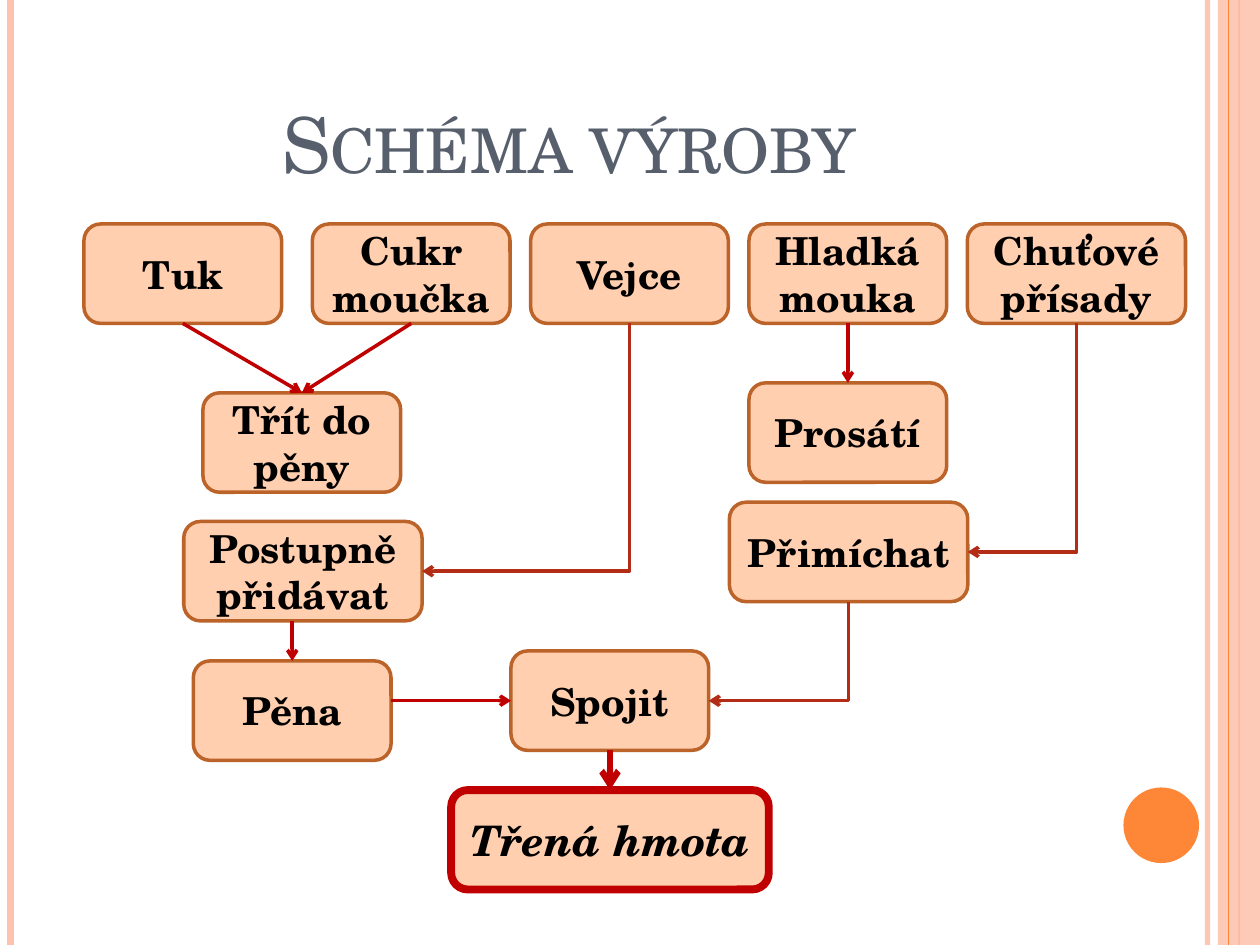
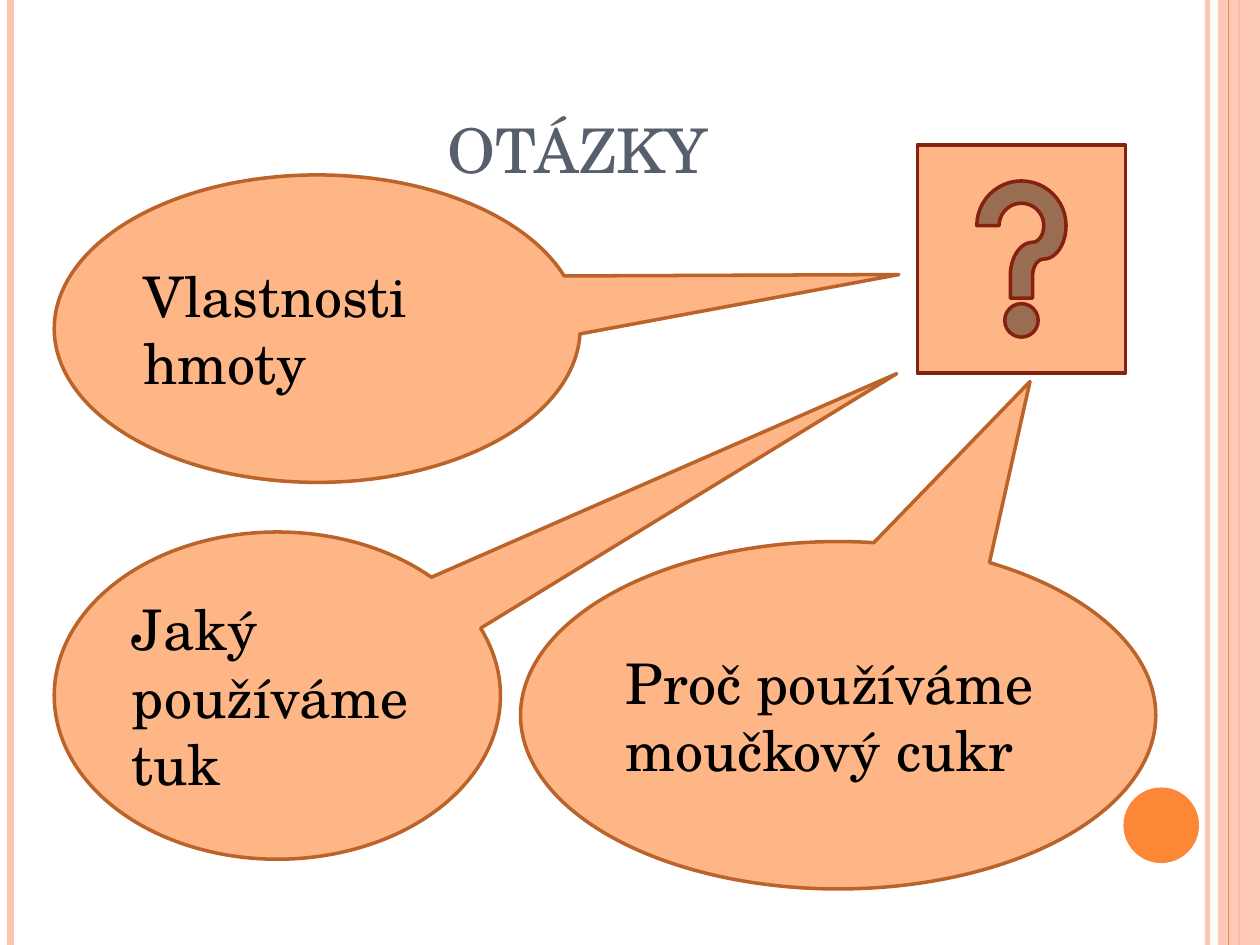
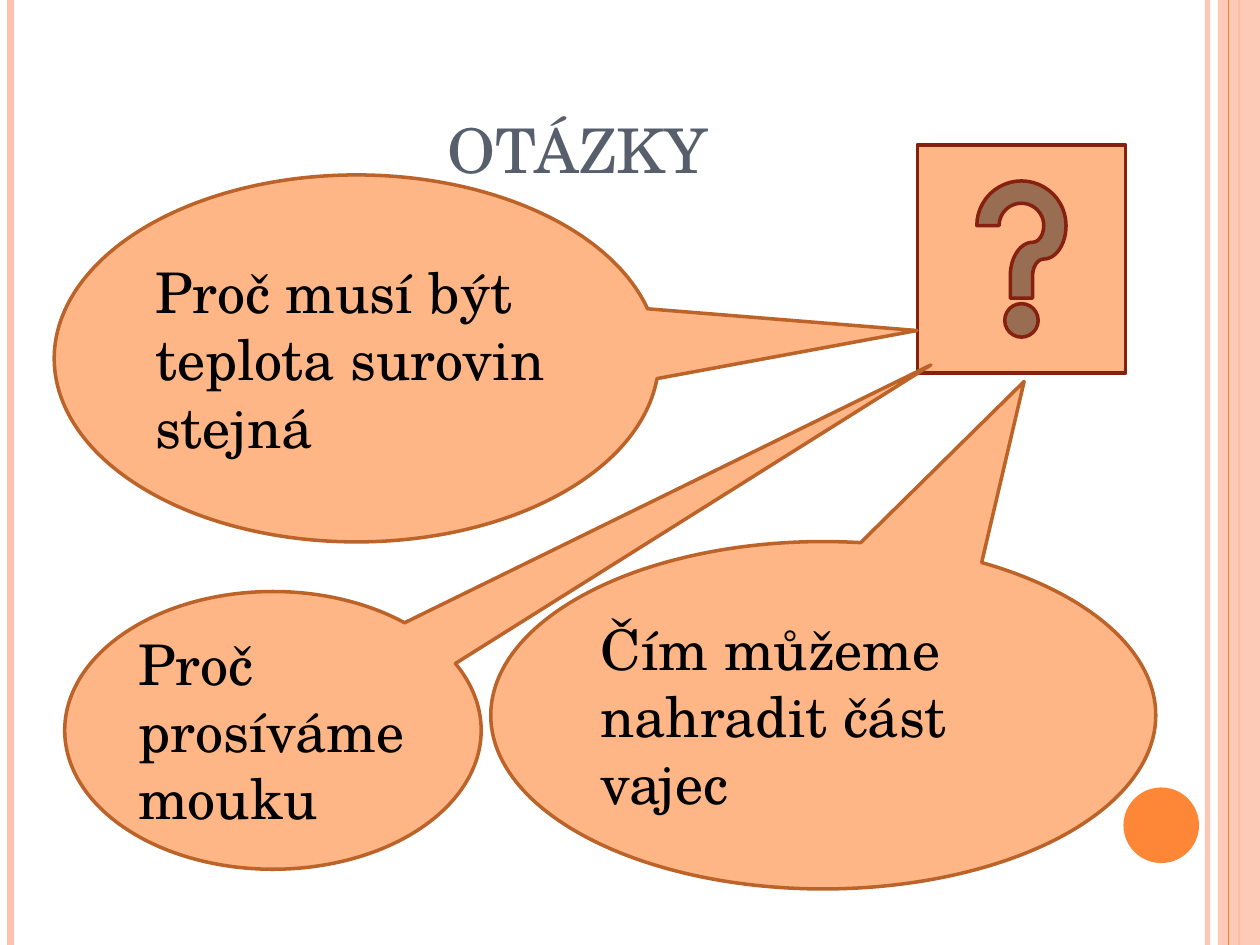
import pptx
import pptx.util
import pptx.dml.color
import pptx.enum.shapes
import pptx.enum.text
import pptx.oxml
from pptx.oxml.ns import qn

Pt = pptx.util.Pt
KIND = pptx.enum.shapes.MSO_SHAPE
LINK = pptx.enum.shapes.MSO_CONNECTOR
ALIGN = pptx.enum.text.PP_ALIGN
ANCHOR = pptx.enum.text.MSO_ANCHOR

# Shared look
FONT = "TeX Gyre Schola"
INK, SLATE = "000000", "575F6D"
ROSE, ORANGE = "FEC3AE", "FE8637"
PEACH, CREAM = "FEB687", "FFCFAF"
BROWN, RED, BRICK, MAROON = "BC6329", "C00000", "B32C16", "862110"
WIDE, HIGH = 720, 540

# Scheme: text, left, top, width
BOX_W, BOX_H = 113, 56.8
ROW, STEP, FIRST = 128, 124.75, 178.5
BOXES = {
    "fat": ("Tuk", 48, ROW, BOX_W),
    "sugar": ("Cukr moučka", FIRST, ROW, BOX_W),
    "eggs": ("Vejce", FIRST + STEP, ROW, BOX_W),
    "flour": ("Hladká mouka", FIRST + 2 * STEP, ROW, BOX_W),
    "taste": ("Chuťové přísady", FIRST + 3 * STEP, ROW, 124.7),
    "cream": ("Třít do pěny", 116, 224.5, BOX_W),
    "add": ("Postupně přidávat", 105, 298, 136.2),
    "foam": ("Pěna", 110.5, 377.7, BOX_W),
    "sift": ("Prosátí", FIRST + 2 * STEP, 218.8, BOX_W),
    "mix": ("Přimíchat", 416.8, 287, 136.2),
    "join": ("Spojit", 292, 372, BOX_W),
    "batter": ("Třená hmota", 257.8, 451.5, 181.5),
}
FLOWS = [
    ("fat", "cream", "slant"),
    ("sugar", "cream", "slant"),
    ("flour", "sift", "drop"),
    ("add", "foam", "drop"),
    ("foam", "join", "right"),
    ("eggs", "add", "bend"),
    ("taste", "mix", "bend"),
    ("mix", "join", "bend"),
    ("join", "batter", "drop"),
]

# Questions: text, place, tip of the callout
ASKS = [
    [
        ("Vlastnosti hmoty", (31, 100, 300.5, 175.7), (1.106, -0.176)),
        ("Proč používáme moučkový cukr", (297.5, 309.5, 363, 198.5), (0.302, -0.961)),
        ("Jaký používáme tuk", (31, 304, 255, 187), (1.388, -0.984)),
    ],
    [
        ("Proč musí být teplota surovin stejná", (31, 100, 345.5, 209.7), (0.927, -0.076)),
        ("Čím můžeme nahradit část vajec", (280.5, 309.5, 380, 198.5), (0.302, -0.961)),
        ("Proč prosíváme mouku", (37, 338, 238, 158.7), (1.58, -1.316)),
    ],
]


def tint(target, code, alpha=None):
    """Give a fill a solid colour, with opacity in percent if set."""
    target.solid()
    target.fore_color.rgb = pptx.dml.color.RGBColor.from_string(code)
    if alpha:
        node = target._xPr.find(".//" + qn("a:srgbClr"))
        pptx.oxml.xmlchemy.OxmlElement
        part = node.makeelement(qn("a:alpha"), {"val": str(alpha * 1000)})
        node.append(part)


def shape(slide, kind, place, fill, edge=None, width=2, alpha=None):
    item = slide.shapes.add_shape(kind, *map(Pt, place))
    item.shadow.inherit = False
    tint(item.fill, fill, alpha)
    if edge:
        tint(item.line.fill, edge)
        item.line.width = Pt(width)
    else:
        item.line.fill.background()
    return item


def write(item, text, size, align, color=INK, anchor=ANCHOR.MIDDLE, bold=False, slope=False):
    frame = item.text_frame
    frame.word_wrap = True
    frame.vertical_anchor = anchor
    para = frame.paragraphs[0]
    para.alignment = align
    run = para.add_run()
    run.text = text
    font = run.font
    font.name, font.size, font.bold, font.italic = FONT, Pt(size), bold, slope
    tint(font.fill, color)
    return run


def line(slide, start, end, color, width, kind=LINK.STRAIGHT, arrow=False, alpha=None):
    link = slide.shapes.add_connector(kind, *map(Pt, start + end))
    link.line.width = Pt(width)
    tint(link.line.fill, color, alpha)
    props = link._element.spPr
    if arrow:
        edge = props.find(qn("a:ln"))
        edge.append(edge.makeelement(qn("a:tailEnd"), {"type": "arrow"}))
    props.append(props.makeelement(qn("a:effectLst"), {}))
    return link


def bend(slide, start, end, color, width):
    """Arrow that runs down, then left: a right-down elbow turned by 90 degrees."""
    (x1, y1), (x2, y2) = start, end
    midx, midy = (x1 + x2) / 2, (y1 + y2) / 2
    halfw, halfh = (y2 - y1) / 2, (x1 - x2) / 2
    link = line(slide, (midx - halfw, midy - halfh), (midx + halfw, midy + halfh),
                color, width, LINK.ELBOW, True)
    props = link._element.spPr
    props.find(qn("a:xfrm")).set("rot", "5400000")
    props.find(qn("a:prstGeom")).set("prst", "bentConnector2")


def page(deck, title):
    """Blank slide with side bands, disc and title."""
    slide = deck.slides.add_slide(deck.slide_layouts[6])

    def band(x, color, width, alpha=None):
        line(slide, (x, 0), (x, HIGH), color, width, alpha=alpha)

    band(690, ROSE, 3, 93)
    band(6, ROSE, 4.5)
    band(708, ORANGE, 1.5)
    shape(slide, KIND.RECTANGLE, (696, 0, 24, HIGH), ROSE, alpha=87)
    band(702, ORANGE, 0.75)
    shape(slide, KIND.OVAL, (642, 450, 43.2, 43.2), ORANGE)
    head = slide.shapes.add_textbox(*map(Pt, (36, 21.6, 588, 90)))
    run = write(head, title, 44, ALIGN.CENTER, SLATE, ANCHOR.BOTTOM)
    run.font._element.set("cap", "small")
    return slide


def scheme(deck):
    slide = page(deck, "Schéma výroby ")
    for name, (text, left, top, width) in BOXES.items():
        last = name == "batter"
        box = shape(slide, KIND.ROUNDED_RECTANGLE, (left, top, width, BOX_H), CREAM,
                    RED if last else BROWN, 4.5 if last else 2)
        write(box, text, 24 if last else 22, ALIGN.CENTER, bold=True, slope=last)

    for source, target, way in FLOWS:
        _, ax, ay, aw = BOXES[source]
        _, bx, by, bw = BOXES[target]
        foot = (ax + aw / 2, ay + BOX_H)
        midx, midy = bx + bw / 2, by + BOX_H / 2
        width = 3.5 if target == "batter" else 2
        if way == "bend":
            bend(slide, foot, (bx + bw, midy), BRICK, width)
            continue
        start, end = {
            "slant": (foot, (midx, by)),
            "drop": ((midx, foot[1]), (midx, by)),
            "right": ((ax + aw, midy), (bx, midy)),
        }[way]
        line(slide, start, end, RED, width, arrow=True)


def quiz(deck, asks):
    slide = page(deck, "otázky")
    shape(slide, KIND.ACTION_BUTTON_HELP, (524.2, 82.8, 119, 130.5), PEACH, MAROON)
    for text, place, tip in asks:
        call = shape(slide, KIND.OVAL_CALLOUT, place, PEACH, BROWN)
        call.adjustments[0], call.adjustments[1] = tip
        write(call, text, 32, ALIGN.LEFT)


def main():
    deck = pptx.Presentation()
    deck.slide_width, deck.slide_height = Pt(WIDE), Pt(HIGH)
    scheme(deck)
    for asks in ASKS:
        quiz(deck, asks)
    deck.save("out.pptx")


if __name__ == "__main__":
    main()
